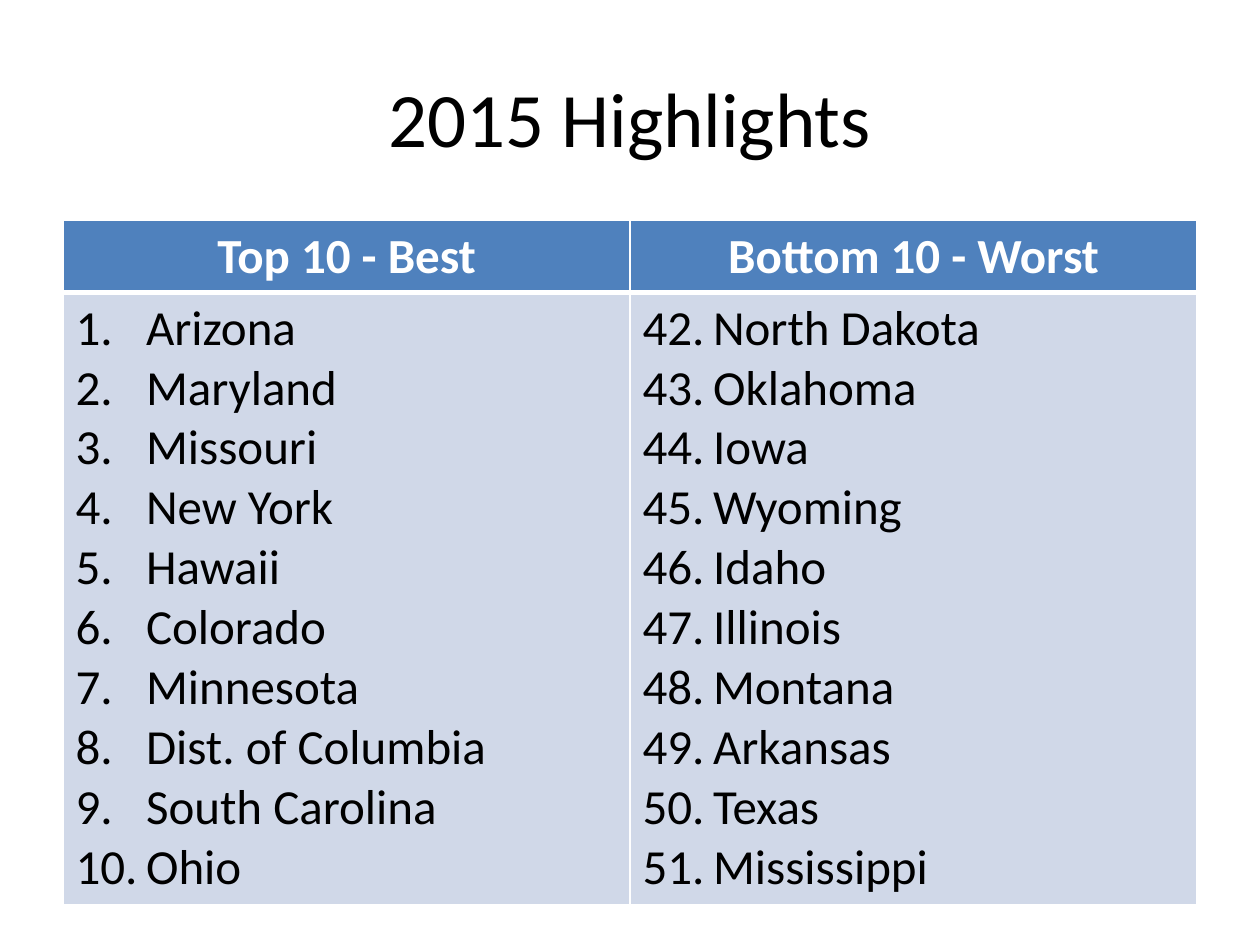
"""Build the 2015 Highlights slide with its best and worst state rankings."""
from dataclasses import dataclass

from lxml import etree
from pptx import Presentation
from pptx.dml.color import RGBColor
from pptx.enum.text import MSO_ANCHOR, PP_ALIGN
from pptx.oxml.ns import qn
from pptx.util import Inches, Pt

CENTER = PP_ALIGN.CENTER
LEFT = PP_ALIGN.LEFT
MIDDLE = MSO_ANCHOR.MIDDLE


@dataclass(frozen=True)
class Theme:
    font: str = "Calibri"
    title_size: int = 44
    table_size: int = 28
    rule_width: int = 3
    ink: str = "000000"
    header_ink: str = "FFFFFF"
    header_fill: str = "4F81BD"
    body_fill: str = "D0D8E8"
    rule: str = "FFFFFF"


THEME = Theme()
RANKINGS = [
    ("Top 10 - Best", 1,
     ["Arizona", "Maryland", "Missouri", "New York", "Hawaii", "Colorado",
      "Minnesota", "Dist. of Columbia", "South Carolina", "Ohio"]),
    ("Bottom 10 - Worst", 42,
     ["North Dakota", "Oklahoma", "Iowa", "Wyoming", "Idaho", "Illinois",
      "Montana", "Arkansas", "Texas", "Mississippi"]),
]


def format_text(frame, size, color, bold=False, align=LEFT):
    for para in frame.paragraphs:
        para.alignment = align
        for span in para.runs:
            span.font.name = THEME.font
            span.font.size = Pt(size)
            span.font.bold = bold
            span.font.color.rgb = RGBColor.from_string(color)


def number_paragraphs(frame, start):
    for para in frame.paragraphs:
        properties = para._p.get_or_add_pPr()
        properties.set("marL", str(Inches(0.56)))
        properties.set("indent", str(-Inches(0.56)))
        bullet = etree.SubElement(properties, qn("a:buAutoNum"), type="arabicPeriod")
        if start > 1:
            bullet.set("startAt", str(start))


deck = Presentation()
deck.slide_width = Inches(10)
deck.slide_height = Inches(7.5)
page = deck.slides.add_slide(deck.slide_layouts[6])

title = page.shapes.add_textbox(Inches(0.5), Inches(0.3), Inches(9), Inches(1.25))
title.text_frame.word_wrap = True
title.text_frame.vertical_anchor = MIDDLE
title.text_frame.text = "2015 Highlights"
format_text(title.text_frame, THEME.title_size, THEME.ink, align=CENTER)

table = page.shapes.add_table(
    2, len(RANKINGS), Inches(0.5), Inches(1.75), Inches(9), Inches(5.43)).table
table.rows[0].height = Inches(0.57)
table.rows[1].height = Inches(4.86)

for column, (heading, start, states) in enumerate(RANKINGS):
    header, body = table.cell(0, column), table.cell(1, column)
    header.text_frame.text = heading
    body.text_frame.text = "\n".join(states)
    format_text(header.text_frame, THEME.table_size, THEME.header_ink, True, CENTER)
    format_text(body.text_frame, THEME.table_size, THEME.ink)
    number_paragraphs(body.text_frame, start)
    for cell, fill, side in ((header, THEME.header_fill, "a:lnB"),
                             (body, THEME.body_fill, "a:lnT")):
        cell.fill.solid()
        cell.fill.fore_color.rgb = RGBColor.from_string(fill)
        border = etree.Element(qn(side), w=str(Pt(THEME.rule_width)))
        paint = etree.SubElement(border, qn("a:solidFill"))
        etree.SubElement(paint, qn("a:srgbClr"), val=THEME.rule)
        cell._tc.get_or_add_tcPr().insert(0, border)

deck.save("out.pptx")
